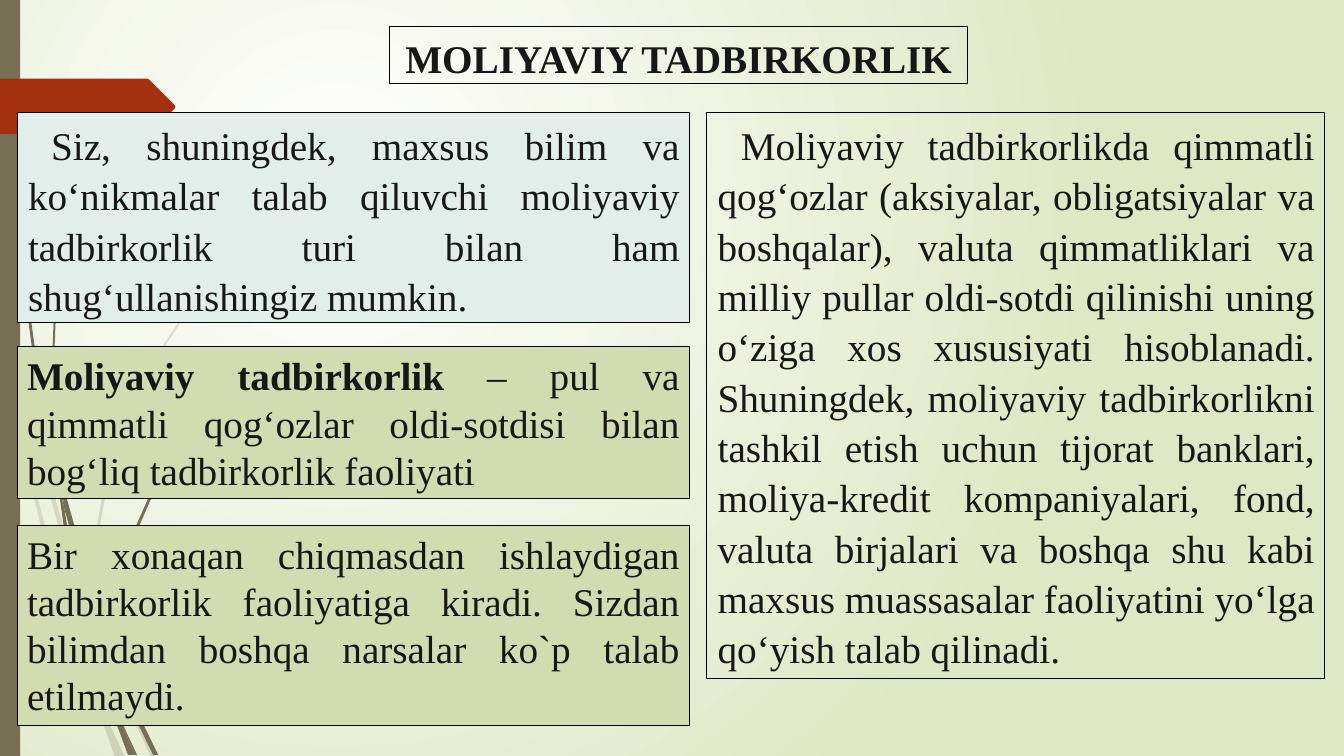
from pptx import Presentation
from pptx.dml.color import RGBColor
from pptx.enum.text import MSO_AUTO_SIZE, PP_ALIGN
from pptx.enum.shapes import MSO_SHAPE
from pptx.oxml import parse_xml
from pptx.oxml.ns import nsdecls
from pptx.util import Pt
from lxml.etree import SubElement
from dataclasses import dataclass

PX = 9144  # EMU per px, 100 px to the inch
SLIDE_W, SLIDE_H = 1333, 750


@dataclass(frozen=True)
class Theme:
    font: str = "Times New Roman"
    size: int = 28
    border: float = 0.75
    text: str = "181717"
    line: str = "000000"
    stem: str = "766F54"
    arrow: str = "A53010"
    mint: str = "E1EEE9"
    olive: str = "D1DDB0"
    glow: str = "FFFFFF"
    edge: str = "DFE8C4"


THEME = Theme()

# Content: box (left, top, width, height), fill, runs (text, bold), paragraph style
LEFT, LEFT_W, TOP = 17, 667, 112
PLAIN = {"align": PP_ALIGN.JUSTIFY}
INDENTED = {"align": PP_ALIGN.JUSTIFY, "indent": 23, "spacing": 1.07}
BOXES = [
    ((386, 26, 574, 57), None, [("MOLIYAVIY TADBIRKORLIK", True)],
     {"align": PP_ALIGN.CENTER, "indent": -1, "spacing": 1.07, "after": 8, "wrap": False}),
    ((LEFT, TOP, LEFT_W, 208), THEME.mint,
     [("Siz, shuningdek, maxsus bilim va ko‘nikmalar talab qiluvchi moliyaviy "
       "tadbirkorlik turi bilan ham shug‘ullanishingiz mumkin.", False)],
     {**INDENTED, "after": 14.1}),
    ((LEFT, 344, LEFT_W, 151), THEME.olive,
     [("Moliyaviy tadbirkorlik", True),
      (" – pul va qimmatli qog‘ozlar oldi-sotdisi bilan bog‘liq "
       "tadbirkorlik faoliyati", False)], PLAIN),
    ((701, TOP, 613, 561), None,
     [("Moliyaviy tadbirkorlikda qimmatli qog‘ozlar (aksiyalar, obligatsiyalar va "
       "boshqalar), valuta qimmatliklari va milliy pullar oldi-sotdi qilinishi uning "
       "o‘ziga xos xususiyati hisoblanadi. Shuningdek, moliyaviy tadbirkorlikni "
       "tashkil etish uchun tijorat banklari, moliya-kredit kompaniyalari, fond, "
       "valuta birjalari va boshqa shu kabi maxsus muassasalar faoliyatini "
       "yo‘lga qo‘yish talab qilinadi.", False)],
     {**INDENTED, "after": 19.1}),
    ((LEFT, 521, LEFT_W, 199), THEME.olive,
     [("Bir xonaqan chiqmasdan ishlaydigan tadbirkorlik faoliyatiga kiradi. Sizdan "
       "bilimdan boshqa narsalar ko`p talab etilmaydi.", False)], PLAIN),
]

# Grass stems: outline points in px
PALE_STEMS = [
    [(58, 522), (84, 599), (85, 586), (62, 520), (14, 345), (17, 376)],
    [(92, 607), (88, 596), (88, 610), (123, 694), (150, 751), (155, 751), (127, 692)],
    [(119, 751), (124, 751), (105, 711)],
    [(93, 683), (70, 619), (31, 469), (17, 376), (11, 350), (28, 470), (65, 621),
     (92, 693), (101, 714), (99, 707)],
    [(88, 584), (110, 462), (160, 349), (229, 245), (268, 198), (290, 175), (312, 154),
     (312, 153), (289, 175), (268, 197), (228, 244), (158, 348), (107, 461), (85, 584),
     (85, 586), (88, 596)],
    [(101, 714), (114, 751), (119, 751)],
    [(96, 692), (93, 683), (99, 707), (101, 714), (119, 751), (105, 711)],
]
DARK_STEMS = [
    [(7, 110), (17, 233), (33, 355), (56, 477), (57, 481), (55, 457), (55, 453),
     (36, 355), (19, 232), (8, 109), (5, 48), (4, 0), (3, 0), (4, 48)],
    [(88, 592), (106, 645), (106, 633), (106, 631), (93, 590), (60, 472), (64, 505)],
    [(113, 649), (110, 641), (111, 656), (132, 708), (152, 749), (157, 749), (136, 706)],
    [(110, 691), (98, 657), (72, 556), (64, 505), (57, 477), (68, 557), (93, 659),
     (111, 708), (117, 722), (116, 717)],
    [(60, 472), (58, 453), (54, 349), (58, 245), (63, 193), (70, 141), (62, 193),
     (56, 245), (52, 349), (55, 449)],
    [(133, 749), (136, 749), (122, 719)],
    [(57, 477), (64, 505), (60, 472), (55, 449), (55, 453)],
    [(111, 633), (125, 552), (158, 476), (205, 406), (231, 374), (245, 359), (261, 344),
     (260, 344), (245, 358), (231, 373), (204, 405), (156, 474), (122, 551), (106, 631),
     (110, 641)],
    [(117, 722), (127, 749), (131, 749)],
    [(116, 706), (110, 691), (116, 717), (117, 722), (130, 749), (133, 749), (122, 719)],
]
ARROW = [(0, 78), (146, 78), (148, 79), (173, 104), (174, 106), (173, 108),
         (148, 133), (146, 134), (136, 134), (0, 133)]


def rgb(color):
    return RGBColor.from_string(color)


def paint(sp, color, alpha=None):
    sp.shadow.inherit = False
    sp.fill.solid()
    sp.fill.fore_color.rgb = rgb(color)
    sp.line.fill.background()
    if alpha:
        node = sp.fill._xPr.find(".//{*}srgbClr")
        SubElement(node, node.tag.replace("srgbClr", "alpha"), val=str(alpha * 1000))


def add_outline(s, points, color, alpha=None):
    builder = s.shapes.build_freeform(*points[0], scale=PX)
    builder.add_line_segments(points[1:], close=True)
    paint(builder.convert_to_shape(), color, alpha)


def add_box(s, place, fill, runs, style):
    sp = s.shapes.add_textbox(*(v * PX for v in place))
    if fill:
        sp.fill.solid()
        sp.fill.fore_color.rgb = rgb(fill)
    sp.line.color.rgb = rgb(THEME.line)
    sp.line.width = Pt(THEME.border)
    tf = sp.text_frame
    tf.word_wrap = style.get("wrap", True)
    tf.auto_size = MSO_AUTO_SIZE.SHAPE_TO_FIT_TEXT
    p = tf.paragraphs[0]
    p.alignment = style["align"]
    if "indent" in style:
        p.line_spacing = style["spacing"]
        p.space_after = Pt(style["after"])
        pPr = p._p.get_or_add_pPr()
        pPr.set("marL", str(PX))
        pPr.set("indent", str(style["indent"] * PX))
    for text, bold in runs:
        r = p.add_run()
        r.text = text
        r.font.name, r.font.size, r.font.bold = THEME.font, Pt(THEME.size), bold
        r.font.color.rgb = rgb(THEME.text)


def set_background(s):
    fill = s.background.fill
    fill.gradient()
    for stop, position, color in zip(fill.gradient_stops, (0, 1), (THEME.glow, THEME.edge)):
        stop.position = position
        stop.color.rgb = rgb(color)
    lin = s.background._cSld.find(".//{*}lin")
    lin.getparent().replace(lin, parse_xml(
        f'<a:path {nsdecls("a")} path="circle">'
        '<a:fillToRect l="50000" t="50000" r="100000" b="100000"/></a:path>'))


def main():
    prs = Presentation()
    prs.slide_width, prs.slide_height = SLIDE_W * PX, SLIDE_H * PX
    s = prs.slides.add_slide(prs.slide_layouts[6])
    set_background(s)

    # Grass, side bar and arrow
    for stems, alpha in ((PALE_STEMS, 20), (DARK_STEMS, None)):
        for points in stems:
            add_outline(s, points, THEME.stem, alpha)
    bar = s.shapes.add_shape(MSO_SHAPE.RECTANGLE, 0, 0, 20 * PX, SLIDE_H * PX)
    paint(bar, THEME.stem)
    add_outline(s, ARROW, THEME.arrow)

    # Text boxes
    for box in BOXES:
        add_box(s, *box)
    prs.save("out.pptx")


if __name__ == "__main__":
    main()
